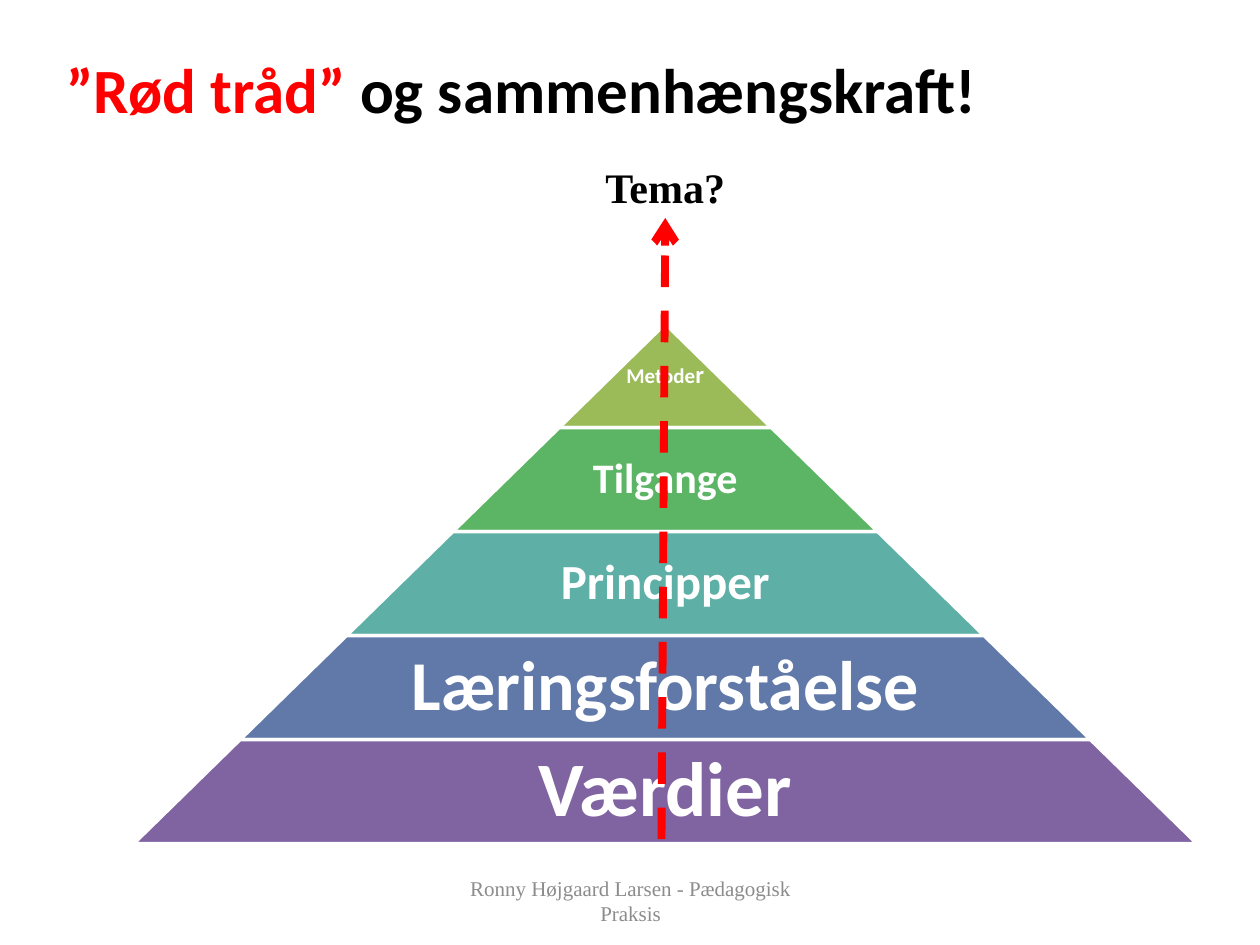
"""Build a slide with a five-tier pyramid and a dashed red thread leading to the theme."""
from lxml import etree
from pptx import Presentation
from pptx.dml.color import RGBColor
from pptx.enum.dml import MSO_LINE
from pptx.enum.shapes import MSO_CONNECTOR, MSO_SHAPE
from pptx.enum.text import MSO_ANCHOR, MSO_AUTO_SIZE, PP_ALIGN
from pptx.oxml.ns import qn
from pptx.util import Inches, Pt

COLORS = {
    "black": "000000", "white": "FFFFFF", "red": "FF0000", "gray": "8C8C8C",
    "green": "9BBB59", "emerald": "5CB565", "teal": "5EAFA6",
    "blue": "6179A8", "purple": "8064A2",
}


def rgb(name):
    return RGBColor.from_string(COLORS[name])


def add_text(s, box, runs, font, bold=True, align=PP_ALIGN.CENTER, anchor=MSO_ANCHOR.MIDDLE):
    tb = s.shapes.add_textbox(*map(Inches, box))
    tf = tb.text_frame
    tf.word_wrap = True
    tf.vertical_anchor = anchor
    p = tf.paragraphs[0]
    p.alignment = align
    for text, size, color in runs:
        r = p.add_run()
        r.text = text
        r.font.name = font
        r.font.size = Pt(size)
        r.font.bold = bold
        r.font.color.rgb = rgb(color)
    return tb


prs = Presentation()
prs.slide_width, prs.slide_height = Inches(10), Inches(7.5)
s = prs.slides.add_slide(prs.slide_layouts[6])

title = [("”Rød tråd” ", 36, "red"), ("og sammenhængskraft!", 36, "black")]
add_text(s, (0.43, 0.27, 9, 0.87), title, "Calibri", align=PP_ALIGN.LEFT)
footer = [("Ronny Højgaard Larsen - Pædagogisk Praksis", 12, "gray")]
add_text(s, (3.42, 6.95, 3.17, 0.4), footer, "Times New Roman", bold=False)

CENTER, TOP, TIER_H, STEP_W = 5.28, 2.57, 0.825, 1.6875
tiers = [
    ("green", [("Metode", 12), ("r", 14)], 1),
    ("emerald", [("Tilgange", 24)], 0.65),
    ("teal", [("Principper", 28)], 0.65),
    ("blue", [("Læringsforståelse", 40)], 0.65),
    ("purple", [("Værdier", 44)], 0.65),
]
for i, (color, words, share) in enumerate(tiers):
    width = STEP_W * (i + 1)
    top = TOP + TIER_H * i
    sp = s.shapes.add_shape(
        MSO_SHAPE.TRAPEZOID, Inches(CENTER - width / 2), Inches(top), Inches(width), Inches(TIER_H))
    sp.adjustments[0] = STEP_W / 2 / TIER_H
    sp.shadow.inherit = False
    sp.fill.solid()
    sp.fill.fore_color.rgb = rgb(color)
    sp.line.color.rgb = rgb("white")
    sp.line.width = Pt(2)

    label_w = width * share
    runs = [(text, size, "white") for text, size in words]
    label = add_text(s, (CENTER - label_w / 2, top, label_w, TIER_H), runs, "Calibri")
    tf = label.text_frame
    tf.margin_left = tf.margin_right = tf.margin_top = tf.margin_bottom = Inches(0.04)
    tf.paragraphs[0].line_spacing = 0.9

theme = add_text(s, (3.35, 1.23, 3.86, 0.5), [("Tema?", 24, "black")],
                 "Times New Roman", anchor=MSO_ANCHOR.TOP)
theme.text_frame.auto_size = MSO_AUTO_SIZE.SHAPE_TO_FIT_TEXT

thread = s.shapes.add_connector(
    MSO_CONNECTOR.STRAIGHT, Inches(5.25), Inches(6.66), Inches(5.28), Inches(1.73))
thread.end_connect(theme, 2)
thread.line.color.rgb = rgb("red")
thread.line.width = Pt(4.5)
thread.line.dash_style = MSO_LINE.DASH
etree.SubElement(thread.line._get_or_add_ln(), qn("a:tailEnd"), type="arrow")
etree.SubElement(thread._element.spPr, qn("a:effectLst"))

prs.save("out.pptx")
